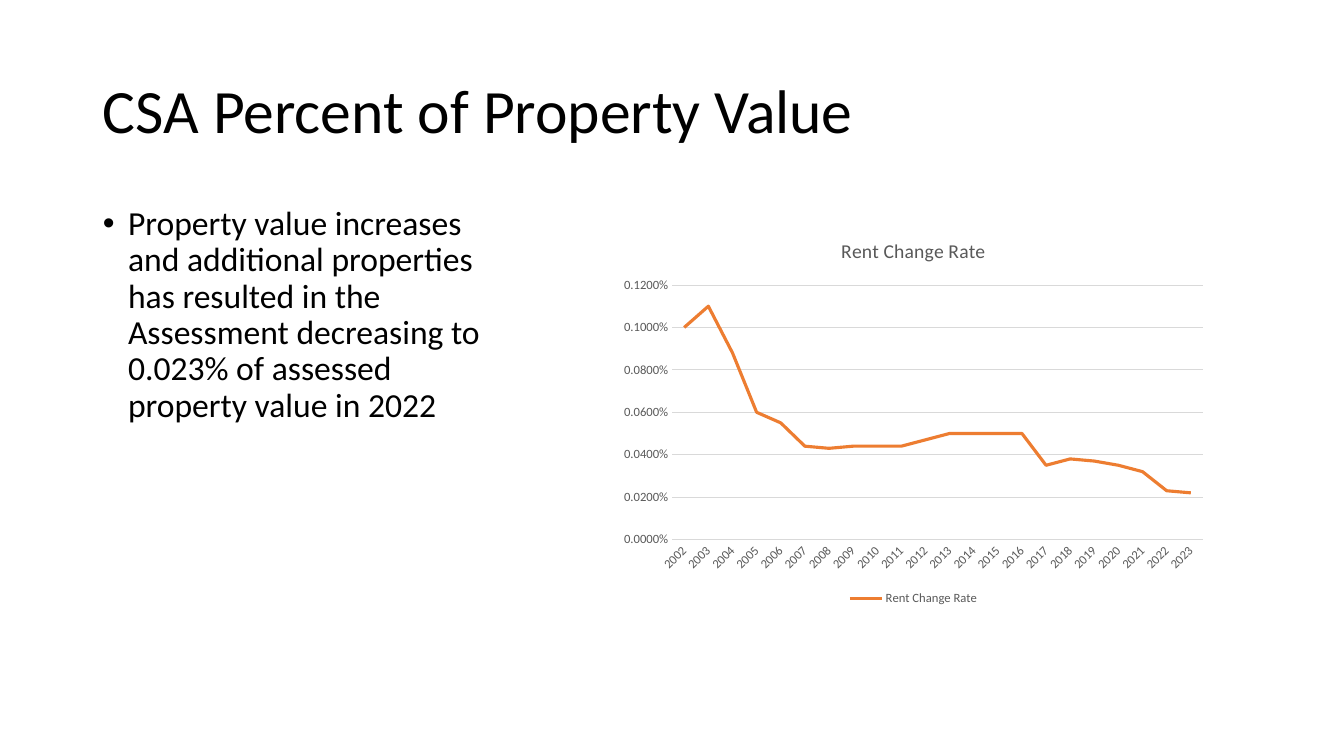
import pptx
import pptx.chart.data
import pptx.dml.color
import pptx.enum.chart
import pptx.enum.text
import pptx.util

Inches = pptx.util.Inches
Pt = pptx.util.Pt

FONT = "Calibri"
COLORS = {"text": "000000", "label": "595959", "grid": "D9D9D9", "rate": "ED7D31"}
FIRST_YEAR = 2002
RATES = [
    0.001, 0.0011, 0.00088, 0.0006, 0.00055, 0.00044, 0.00043, 0.00044,
    0.00044, 0.00044, 0.00047, 0.0005, 0.0005, 0.0005, 0.0005, 0.00035,
    0.00038, 0.00037, 0.00035, 0.00032, 0.00023, 0.00022,
]


def set_font(font, size, color):
    font.name = FONT
    font.size = Pt(size)
    font.bold = False
    font.color.rgb = pptx.dml.color.RGBColor.from_string(COLORS[color])


def set_line(line, width, color):
    line.width = Pt(width)
    line.color.rgb = pptx.dml.color.RGBColor.from_string(COLORS[color])


deck = pptx.Presentation()
deck.slide_width = Inches(13.33)
deck.slide_height = Inches(7.5)
slide = deck.slides.add_slide(deck.slide_layouts[1])

# Title and takeaway
heading = slide.shapes.title
takeaway = slide.placeholders[1]
for holder, box, words, size, anchor in [
    (heading, (0.92, 0.4, 11.5, 1.45), "CSA Percent of Property Value", 44,
     pptx.enum.text.MSO_ANCHOR.MIDDLE),
    (takeaway, (0.92, 2, 4.11, 4.76),
     "Property value increases and additional properties has resulted in the "
     "Assessment decreasing to 0.023% of assessed property value in 2022", 24,
     pptx.enum.text.MSO_ANCHOR.TOP),
]:
    holder.left, holder.top, holder.width, holder.height = map(Inches, box)
    holder.text_frame.text = words
    holder.text_frame.vertical_anchor = anchor
    paragraph = holder.text_frame.paragraphs[0]
    paragraph.alignment = pptx.enum.text.PP_ALIGN.LEFT
    paragraph.line_spacing = 0.9
    set_font(paragraph.font, size, "text")

# Bullet spacing and hanging indent
bullet = takeaway.text_frame.paragraphs[0]
bullet.space_before = Pt(10)
bullet_format = bullet._p.get_or_add_pPr()
bullet_format.set("marL", str(Inches(0.25)))
bullet_format.set("indent", str(Inches(-0.25)))

# Rent change chart
rent_data = pptx.chart.data.CategoryChartData(number_format="0.0000%")
rent_data.categories = [str(FIRST_YEAR + i) for i in range(len(RATES))]
rent_data.add_series("Rent Change Rate", RATES)
rent_chart = slide.shapes.add_chart(
    pptx.enum.chart.XL_CHART_TYPE.LINE,
    Inches(6.07), Inches(2.19), Inches(5.98), Inches(3.86), rent_data,
).chart
set_font(rent_chart.font, 10, "text")

rent_chart.has_title = True
rent_chart.chart_title.include_in_layout = False
rent_chart.chart_title.text_frame.text = "Rent Change Rate"
set_font(rent_chart.chart_title.text_frame.paragraphs[0].font, 14, "label")

rent_chart.has_legend = True
rent_chart.legend.position = pptx.enum.chart.XL_LEGEND_POSITION.BOTTOM
rent_chart.legend.include_in_layout = False
set_font(rent_chart.legend.font, 9, "label")

rent_chart.plots[0].vary_by_categories = False
rate_series = rent_chart.plots[0].series[0]
rate_series.smooth = False
rate_series.marker.style = pptx.enum.chart.XL_MARKER_STYLE.NONE
set_line(rate_series.format.line, 2.25, "rate")

# Axes
years = rent_chart.category_axis
percents = rent_chart.value_axis
for axis in (years, percents):
    axis.major_tick_mark = pptx.enum.chart.XL_TICK_MARK.NONE
    axis.minor_tick_mark = pptx.enum.chart.XL_TICK_MARK.NONE
    set_font(axis.tick_labels.font, 9, "label")
set_line(years.format.line, 0.75, "grid")
years._element.txPr.bodyPr.set("rot", "-2700000")  # labels slanted 45 degrees

percents.minimum_scale = 0
percents.maximum_scale = 0.0012
percents.major_unit = 0.0002
percents.format.line.fill.background()
percents.has_major_gridlines = True
set_line(percents.major_gridlines.format.line, 0.75, "grid")
percents.tick_labels.number_format = "0.0000%"
percents.tick_labels.number_format_is_linked = False

deck.save("out.pptx")
